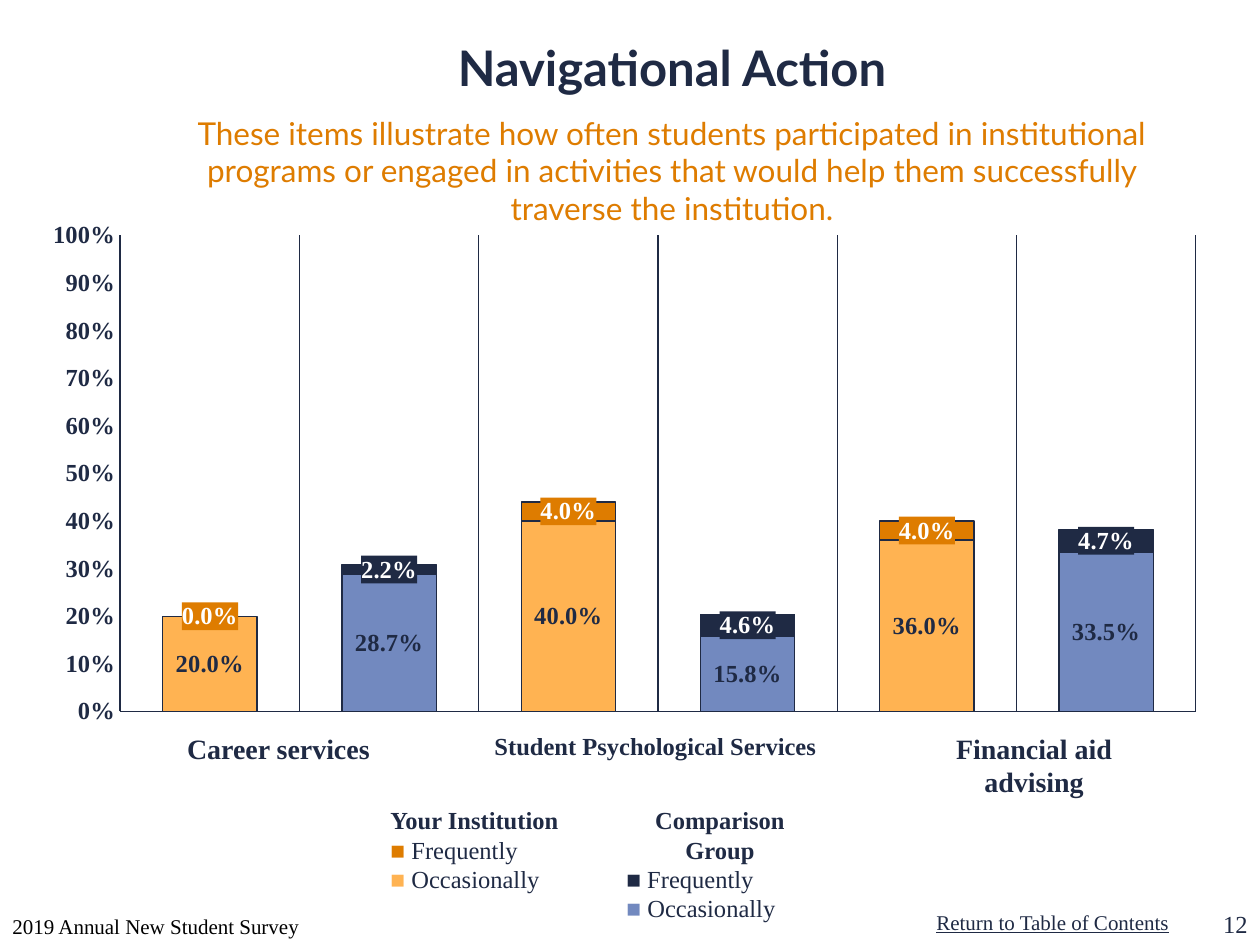
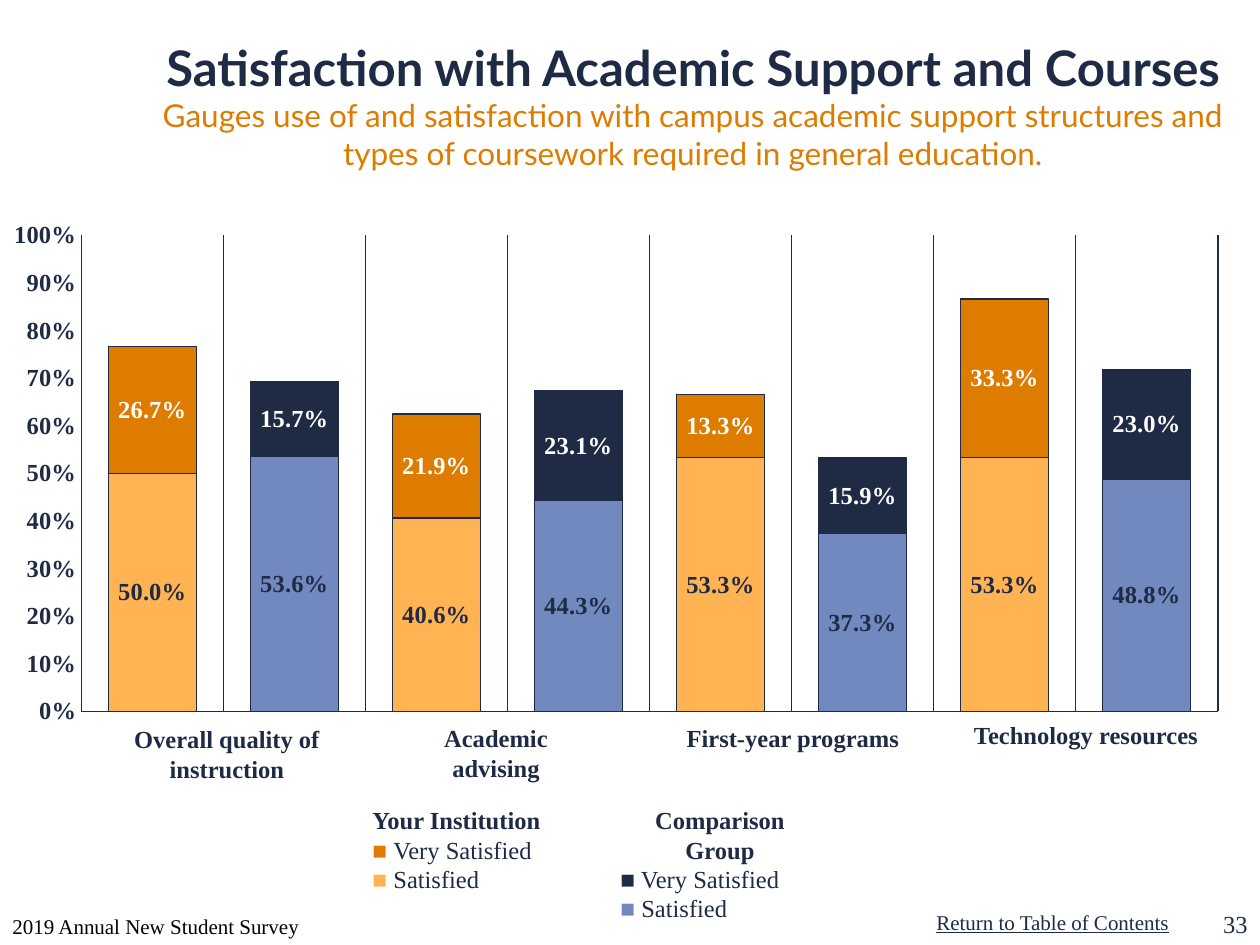
"""Build two survey result slides with stacked column charts."""
import pptx
import pptx.chart.data
import pptx.dml.color
import pptx.enum.chart
import pptx.enum.text
import pptx.oxml
import pptx.oxml.ns
import pptx.util

RGBColor = pptx.dml.color.RGBColor
NAVY = RGBColor(0x1F, 0x2A, 0x44)
ORANGE = RGBColor(0xDE, 0x7C, 0x00)
LIGHT_ORANGE = RGBColor(0xFF, 0xB3, 0x52)
BLUE = RGBColor(0x72, 0x89, 0xBF)
WHITE = RGBColor(0xFF, 0xFF, 0xFF)
BLACK = RGBColor(0x00, 0x00, 0x00)
SERIF, SANS = "Times New Roman", "Lato"
ALIGN, ANCHOR = pptx.enum.text.PP_ALIGN, pptx.enum.text.MSO_ANCHOR
PX = 914400 / 126
COMPARISON_CENTER = 720

LAYOUT_XML = (
    '<c:layout %s><c:manualLayout><c:layoutTarget val="inner"/>'
    '<c:xMode val="edge"/><c:yMode val="edge"/><c:x val="%s"/><c:y val="0.03"/>'
    '<c:w val="%s"/><c:h val="0.93"/></c:manualLayout></c:layout>'
)
LABEL_FILL_XML = '<c:spPr %s><a:solidFill><a:srgbClr val="%s"/></a:solidFill></c:spPr>'

SLIDES = [
    dict(
        number="12",
        title="Navigational Action",
        title_box=(147, 31, 1050, 158),
        subtitle="These items illustrate how often students participated in institutional "
                 "programs or engaged in activities that would help them successfully "
                 "traverse the institution.",
        subtitle_gap=10,
        chart_box=(53, 220, 1144, 512),
        plot=(0.058, 0.941),
        gap_width=90, grid_width=0.75, baseline_width=1, filled_labels=True,
        lower=(0.2, 0.287, 0.4, 0.158, 0.36, 0.335),
        upper=(0, 0.022, 0.04, 0.046, 0.04, 0.047),
        questions=[
            ("Career services", 16, (126, 725, 305, 47)),
            ("Student Psychological Services", 14, (470, 725, 371, 43)),
            ("Financial aid advising", 16, (892, 725, 284, 81)),
        ],
        answers=("Frequently", "Occasionally"),
        institution_left=378, comparison_left=614,
    ),
    dict(
        number="33",
        title="Satisfaction with Academic Support and Courses",
        title_box=(126, 31, 1134, 158),
        subtitle="Gauges use of and satisfaction with campus academic support structures "
                 "and types of coursework required in general education.",
        subtitle_gap=0,
        chart_box=(14, 220, 1205, 512),
        plot=(0.056, 0.943),
        gap_width=61, grid_width=1, baseline_width=0.75, filled_labels=False,
        lower=(0.5, 0.536, 0.406, 0.443, 0.533, 0.373, 0.533, 0.488),
        upper=(0.267, 0.157, 0.219, 0.231, 0.133, 0.159, 0.333, 0.23),
        questions=[
            ("Overall quality of instruction", 14, (96, 718, 262, 72)),
            ("Academic advising", 14, (386, 717, 220, 72)),
            ("First-year programs", 14, (672, 717, 242, 43)),
            ("Technology resources", 14, (955, 714, 262, 43)),
        ],
        answers=("Very Satisfied", "Satisfied"),
        institution_left=360, comparison_left=608,
    ),
]


def add_frame(slide, box, anchor=ANCHOR.TOP):
    frame = slide.shapes.add_textbox(*(round(n * PX) for n in box)).text_frame
    frame.word_wrap = True
    frame.vertical_anchor = anchor
    return frame


def write(frame, text, size=14, color=NAVY, bold=False, underline=False, font=SERIF,
          align=ALIGN.LEFT, space_before=0, swatch=None):
    paragraph = frame.add_paragraph() if frame.text else frame.paragraphs[0]
    paragraph.alignment = align
    if space_before:
        paragraph.space_before = pptx.util.Pt(space_before)
    pieces = [(text, color)] if swatch is None else [("■ ", swatch), (text, color)]
    for piece, piece_color in pieces:
        run = paragraph.add_run()
        run.text = piece
        run.font.name = font
        run.font.size = pptx.util.Pt(size)
        run.font.bold = bold
        run.font.underline = underline
        run.font.color.rgb = piece_color


deck = pptx.Presentation()
deck.slide_width, deck.slide_height = round(1260 * PX), round(945 * PX)

for content in SLIDES:
    slide = deck.slides.add_slide(deck.slide_layouts[6])

    write(add_frame(slide, (924, 903, 261, 38)), "Return to Table of Contents",
          size=12, underline=True)
    heading = add_frame(slide, content["title_box"])
    write(heading, content["title"], size=28, bold=True, font=SANS, align=ALIGN.CENTER)
    write(heading, content["subtitle"], size=18, color=ORANGE, font=SANS,
          align=ALIGN.CENTER, space_before=content["subtitle_gap"])
    write(add_frame(slide, (0, 882, 399, 63), ANCHOR.BOTTOM),
          "2019 Annual New Student Survey", size=12, color=BLACK)
    write(add_frame(slide, (1197, 882, 63, 63), ANCHOR.BOTTOM), content["number"],
          align=ALIGN.RIGHT)

    shares = pptx.chart.data.CategoryChartData(number_format="0.0%")
    shares.categories = [str(n + 1) for n in range(len(content["lower"]))]
    shares.add_series("Series 1", content["lower"])
    shares.add_series("Series 2", content["upper"])
    chart = slide.shapes.add_chart(
        pptx.enum.chart.XL_CHART_TYPE.COLUMN_STACKED,
        *(round(n * PX) for n in content["chart_box"]), shares).chart
    chart.has_legend = False
    chart.has_title = False
    chart.font.name = SERIF
    chart.font.size = pptx.util.Pt(18)
    chart.font.color.rgb = WHITE
    plot_area = chart.element.find(".//" + pptx.oxml.ns.qn("c:plotArea"))
    for layout in plot_area.findall(pptx.oxml.ns.qn("c:layout")):
        plot_area.remove(layout)
    plot_area.insert(0, pptx.oxml.parse_xml(
        LAYOUT_XML % (pptx.oxml.ns.nsdecls("c"), *content["plot"])))

    questions_axis, share_axis = chart.category_axis, chart.value_axis
    questions_axis.tick_label_position = pptx.enum.chart.XL_TICK_LABEL_POSITION.NONE
    questions_axis.has_major_gridlines = True
    share_axis.has_major_gridlines = False
    share_axis.minimum_scale, share_axis.maximum_scale = 0, 1
    share_axis.major_unit = 0.1
    share_axis.tick_labels.number_format = "0%"
    share_axis.tick_labels.number_format_is_linked = False
    share_axis.tick_labels.font.name = SERIF
    share_axis.tick_labels.font.size = pptx.util.Pt(14)
    share_axis.tick_labels.font.bold = True
    share_axis.tick_labels.font.color.rgb = NAVY
    for axis in (questions_axis, share_axis):
        axis.major_tick_mark = pptx.enum.chart.XL_TICK_MARK.NONE
        axis.minor_tick_mark = pptx.enum.chart.XL_TICK_MARK.NONE
    for line, width in ((questions_axis.format.line, content["baseline_width"]),
                        (questions_axis.major_gridlines.format.line, content["grid_width"]),
                        (share_axis.format.line, 1)):
        line.color.rgb = NAVY
        line.width = pptx.util.Pt(width)

    columns = chart.plots[0]
    columns.gap_width = content["gap_width"]
    columns.overlap = 100
    columns.vary_by_categories = False
    for series, fills, label_color in zip(
            columns.series, ((LIGHT_ORANGE, BLUE), (ORANGE, NAVY)), (NAVY, WHITE)):
        series.format.fill.solid()
        series.format.fill.fore_color.rgb = fills[0]
        series.format.line.color.rgb = NAVY
        series.format.line.width = pptx.util.Pt(0.75)
        labels = [series.data_labels]
        labels[0].show_value = True
        labels[0].number_format = "0.0%"
        labels[0].number_format_is_linked = False
        for index in range(len(content["lower"])):
            point = series.points[index]
            point.format.fill.solid()
            point.format.fill.fore_color.rgb = fills[index % 2]
            point.format.line.color.rgb = NAVY
            point.format.line.width = pptx.util.Pt(0.75)
            if content["filled_labels"] and label_color == WHITE:
                labels.append(point.data_label)
        for label in labels:
            label.position = pptx.enum.chart.XL_LABEL_POSITION.CENTER
            label.font.name = SERIF
            label.font.size = pptx.util.Pt(14)
            label.font.bold = True
            label.font.color.rgb = label_color
    for index, label in enumerate(chart.element.iter(pptx.oxml.ns.qn("c:dLbl"))):
        label.find(pptx.oxml.ns.qn("c:txPr")).addprevious(pptx.oxml.parse_xml(
            LABEL_FILL_XML % (pptx.oxml.ns.nsdecls("c", "a"), (ORANGE, NAVY)[index % 2])))

    for question, size, box in content["questions"]:
        write(add_frame(slide, box), question, size=size, bold=True, align=ALIGN.CENTER)

    comparison_left = content["comparison_left"]
    comparison_width = 2 * (COMPARISON_CENTER - comparison_left)
    for group, left, width, align, swatches in (
            ("Your Institution", content["institution_left"], 230, ALIGN.LEFT,
             (ORANGE, LIGHT_ORANGE)),
            ("Comparison Group", comparison_left, comparison_width, ALIGN.CENTER,
             (NAVY, BLUE))):
        legend = add_frame(slide, (left, 799, width, 131))
        write(legend, group, bold=True, align=align)
        for answer, swatch in zip(content["answers"], swatches):
            write(legend, answer, swatch=swatch)

deck.save("out.pptx")
